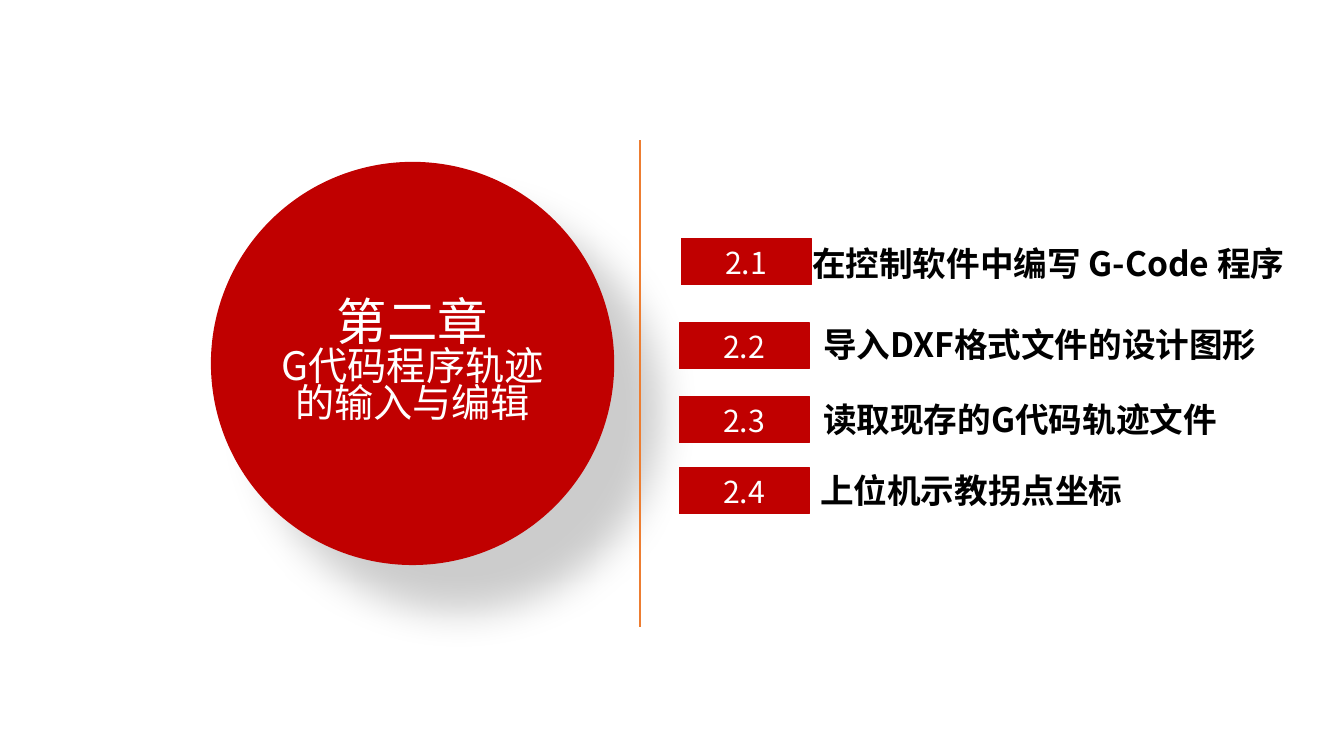
import pptx
import pptx.util
import pptx.dml.color
import pptx.enum.shapes
import pptx.enum.text
import pptx.oxml
import pptx.oxml.ns

PX = 9144000 // 1008  # EMU per px at 100.8 px to the inch
THEME = {
    "font": "Noto Sans CJK SC",
    "red": "C00000", "orange": "ED7D31", "white": "FFFFFF", "black": "000000",
    "chapter": 36, "title": 28, "item": 24, "number": 21.6,
}
ALIGN = pptx.enum.text.PP_ALIGN
SHAPES = pptx.enum.shapes.MSO_SHAPE
DRAWING = pptx.oxml.ns.nsdecls("a")

presentation = pptx.Presentation()
presentation.slide_width = pptx.util.Inches(13.33)
presentation.slide_height = pptx.util.Inches(7.5)
slide = presentation.slides.add_slide(presentation.slide_layouts[6])


def add_red_shape(kind, left, top, width, height, line_width):
    shape = slide.shapes.add_shape(kind, left * PX, top * PX, width * PX, height * PX)
    shape.shadow.inherit = False
    color = pptx.dml.color.RGBColor.from_string(THEME["red"])
    shape.fill.solid()
    shape.fill.fore_color.rgb = color
    shape.line.color.rgb = color
    shape.line.width = pptx.util.Pt(line_width)
    shape.text_frame.vertical_anchor = pptx.enum.text.MSO_ANCHOR.MIDDLE
    return shape


def format_paragraph(paragraph, size, color, align, bold=False):
    paragraph.alignment = align
    for run in paragraph.runs:
        run.font.size = pptx.util.Pt(size)
        run.font.bold = bold
        run.font.color.rgb = pptx.dml.color.RGBColor.from_string(color)
        run.font.name = THEME["font"]
        east_asian = pptx.oxml.parse_xml(f'<a:ea {DRAWING} typeface="{THEME["font"]}"/>')
        run.font._element.find(pptx.oxml.ns.qn("a:latin")).addnext(east_asian)


# Chapter circle with a soft shadow
circle = add_red_shape(SHAPES.OVAL, 213, 164, 399, 399, 3)
effects = circle._element.spPr.find(pptx.oxml.ns.qn("a:effectLst"))
effects.append(pptx.oxml.parse_xml(
    f'<a:outerShdw {DRAWING} blurRad="{pptx.util.Pt(29)}" dist="{pptx.util.Pt(46)}" '
    'dir="2700000" algn="tl" rotWithShape="0">'
    '<a:srgbClr val="000000"><a:alpha val="20000"/></a:srgbClr></a:outerShdw>'))
frame = circle.text_frame
frame.word_wrap = True
frame.margin_left = frame.margin_right = 0
frame.text = "第二章\nG代码程序轨迹的输入与编辑"
for paragraph, size in zip(frame.paragraphs, (THEME["chapter"], THEME["title"])):
    paragraph.line_spacing = 0.8
    format_paragraph(paragraph, size, THEME["white"], ALIGN.CENTER)

# Vertical divider
divider = slide.shapes.add_connector(
    pptx.enum.shapes.MSO_CONNECTOR.STRAIGHT, 640 * PX, 627 * PX, 640 * PX, 140 * PX)
divider.line.color.rgb = pptx.dml.color.RGBColor.from_string(THEME["orange"])
divider.line.width = pptx.util.Pt(1.5)
divider._element.spPr.append(pptx.oxml.parse_xml(f"<a:effectLst {DRAWING}/>"))

# Sections: number, tag left and top, title left and top, title
sections = [
    ("2.1", 681, 239, 802, 238, "在控制软件中编写 G-Code 程序"),
    ("2.2", 679, 323, 813, 319, "导入DXF格式文件的设计图形"),
    ("2.3", 679, 397, 813, 394, "读取现存的G代码轨迹文件"),
    ("2.4", 679, 468, 810, 465, "上位机示教拐点坐标"),
]
for number, tag_left, tag_top, title_left, title_top, title in sections:
    tag = add_red_shape(SHAPES.RECTANGLE, tag_left, tag_top, 130, 46, 0.75)
    tag.text_frame.text = number
    format_paragraph(tag.text_frame.paragraphs[0], THEME["number"], THEME["white"], ALIGN.CENTER)

    box = slide.shapes.add_textbox(title_left * PX, title_top * PX, 530 * PX, 50 * PX)
    box.text_frame.word_wrap = False
    box.text_frame.text = title
    format_paragraph(box.text_frame.paragraphs[0], THEME["item"], THEME["black"], ALIGN.LEFT, bold=True)

presentation.save("out.pptx")
